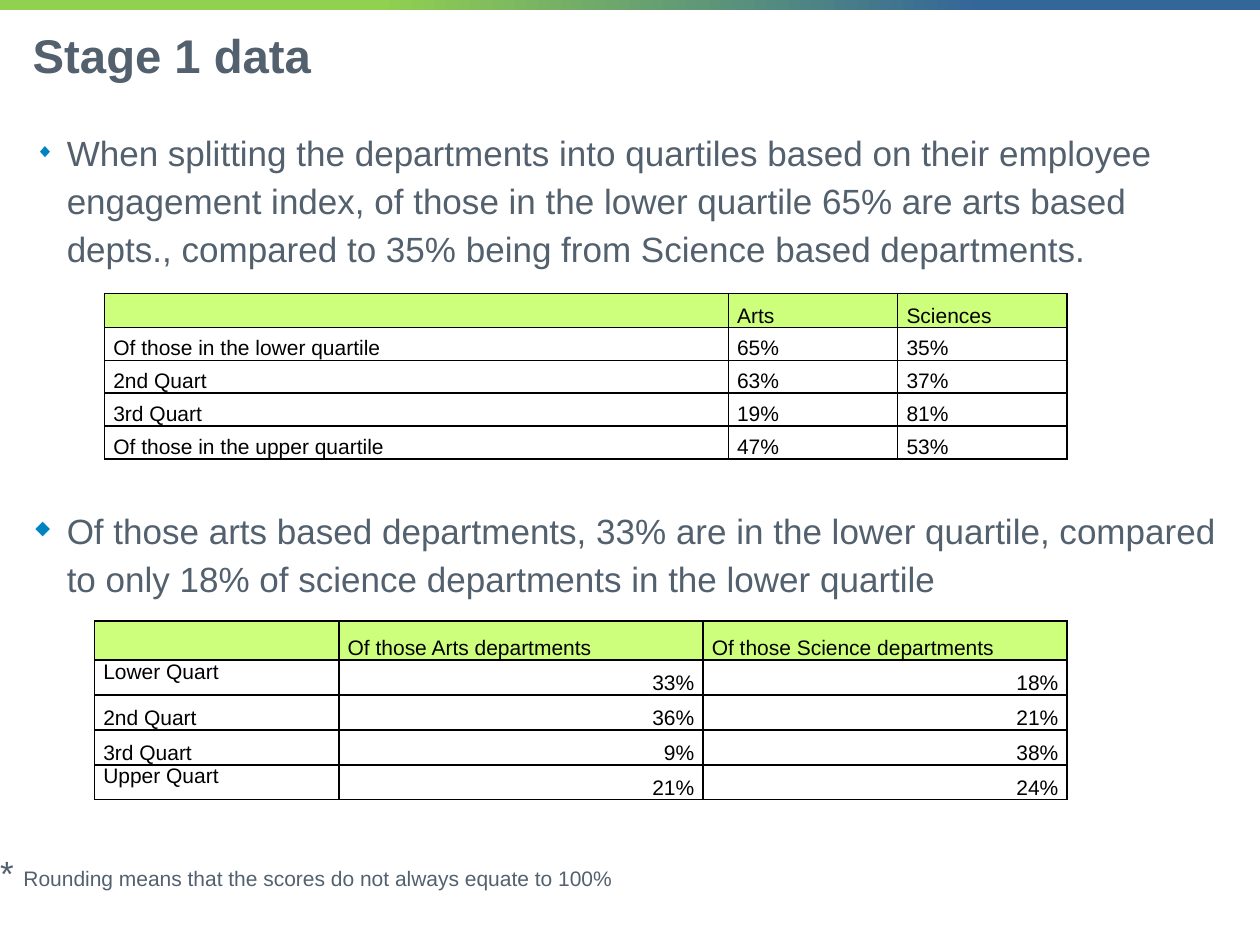
from dataclasses import dataclass

from lxml import etree
from pptx import Presentation
from pptx import util as u
from pptx.dml.color import RGBColor
from pptx.enum import shapes, text
from pptx.oxml.ns import qn

SLATE = RGBColor(0x53, 0x60, 0x6E)
BULLET_BLUE = RGBColor(0x00, 0x83, 0xC1)
LIME = RGBColor(0xCD, 0xFF, 0x7D)
BLACK = RGBColor(0, 0, 0)
BAR_GREEN = RGBColor(0x92, 0xD0, 0x50)
BAR_BLUE = RGBColor(0x33, 0x66, 0x99)
FONT = "Arial"
GRID = u.Inches(0.1)  # the slide is 100 columns by 75 rows


@dataclass(frozen=True)
class Area:
    """A place on the slide, in grid columns and rows."""
    left: float
    top: float
    width: float
    height: float

    def emu(self) -> list[int]:
        return [grid(n) for n in (self.left, self.top, self.width, self.height)]


@dataclass(frozen=True)
class QuartileTable:
    area: Area
    columns: tuple[float, ...]
    header_height: float
    row_height: float
    rows: tuple[tuple[str, ...], ...]
    top_margin: float = 0
    value_align: text.PP_ALIGN = text.PP_ALIGN.LEFT
    top_labels: tuple[str, ...] = ()


def grid(units: float) -> int:
    return round(units * GRID)


def set_font(font, size: float, color: RGBColor, bold: bool = False) -> None:
    font.name, font.size, font.bold = FONT, u.Pt(size), bold
    font.color.rgb = color


def place(shape, area: Area) -> None:
    shape.left, shape.top, shape.width, shape.height = area.emu()


def prepare_frame(shape):
    """Make a wrapping, top-anchored frame without margins; return its paragraph."""
    frame = shape.text_frame
    frame.word_wrap = True
    frame.auto_size = text.MSO_AUTO_SIZE.NONE
    frame.vertical_anchor = text.MSO_ANCHOR.TOP
    frame.margin_left = frame.margin_right = frame.margin_top = frame.margin_bottom = 0
    paragraph = frame.paragraphs[0]
    paragraph.line_spacing = 1.15
    paragraph.space_before = u.Pt(0)
    properties = paragraph._p.get_or_add_pPr()
    properties.set("marL", str(grid(2.5)))
    properties.set("indent", str(-grid(2.5)))
    return paragraph


def write_finding(shape, wording: str) -> None:
    paragraph = prepare_frame(shape)
    properties = paragraph._p.get_or_add_pPr()
    color = etree.SubElement(properties, qn("a:buClr"))
    etree.SubElement(color, qn("a:srgbClr"), val=str(BULLET_BLUE))
    etree.SubElement(properties, qn("a:buSzPct"), val="55000")
    etree.SubElement(properties, qn("a:buChar"), char="◆")
    set_font(paragraph.font, 20, SLATE)
    paragraph.add_run().text = wording


def write_footnote(shape, wording: str) -> None:
    paragraph = prepare_frame(shape)
    for part, size in (("* ", 20), (wording, 12)):
        run = paragraph.add_run()
        run.text = part
        set_font(run.font, size, SLATE)


def add_borders(cell) -> None:
    properties = cell._tc.get_or_add_tcPr()
    for side in ("lnL", "lnR", "lnT", "lnB"):
        line = etree.SubElement(properties, qn(f"a:{side}"), w=str(u.Pt(1)))
        fill = etree.SubElement(line, qn("a:solidFill"))
        etree.SubElement(fill, qn("a:srgbClr"), val=str(BLACK))


def add_quartile_table(slide, spec_: QuartileTable) -> None:
    table = slide.shapes.add_table(
        len(spec_.rows), len(spec_.columns), *spec_.area.emu()).table
    for column, width in zip(table.columns, spec_.columns):
        column.width = grid(width)
    for r, wordings in enumerate(spec_.rows):
        table.rows[r].height = grid(spec_.row_height if r else spec_.header_height)
        for c, wording in enumerate(wordings):
            cell = table.cell(r, c)
            add_borders(cell)
            if r == 0:
                cell.fill.solid()
                cell.fill.fore_color.rgb = LIME
            else:
                cell.fill.background()
            cell.margin_left = cell.margin_right = grid(0.7)
            cell.margin_top, cell.margin_bottom = grid(spec_.top_margin), 0
            cell.vertical_anchor = (text.MSO_ANCHOR.TOP if wording in spec_.top_labels
                                    else text.MSO_ANCHOR.BOTTOM)
            paragraph = cell.text_frame.paragraphs[0]
            if r and c:
                paragraph.alignment = spec_.value_align
            set_font(paragraph.font, 12, BLACK)
            if wording:
                paragraph.add_run().text = wording
            else:  # keeps the empty cell from stretching its row
                etree.SubElement(paragraph._p, qn("a:endParaRPr"), sz="1200")


def add_top_bar(slide) -> None:
    bar = slide.shapes.add_shape(
        shapes.MSO_SHAPE.RECTANGLE, *Area(0, 0, 100, 0.8).emu())
    bar.shadow.inherit = False
    bar.line.fill.background()
    bar.fill.gradient()
    bar.fill.gradient_angle = 0
    stops = ((0.3, BAR_GREEN), (0.78, BAR_BLUE))
    for stop, (position, color) in zip(bar.fill.gradient_stops, stops):
        stop.position = position
        stop.color.rgb = color


BY_QUARTILE = QuartileTable(
    Area(8.3, 23.3, 76.4, 13.2), (49.5, 13.45, 13.45), 2.7, 2.61,
    (("", "Arts", "Sciences"),
     ("Of those in the lower quartile", "65%", "35%"),
     ("2nd Quart", "63%", "37%"),
     ("3rd Quart", "19%", "81%"),
     ("Of those in the upper quartile", "47%", "53%")),
    top_margin=0.1)

BY_DEPARTMENT = QuartileTable(
    Area(7.5, 49.3, 77.2, 14.2), (19.4, 28.9, 28.9), 3.1, 2.77,
    (("", "Of those Arts departments", "Of those Science departments"),
     ("Lower Quart", "33%", "18%"),
     ("2nd Quart", "36%", "21%"),
     ("3rd Quart", "9%", "38%"),
     ("Upper Quart", "21%", "24%")),
    value_align=text.PP_ALIGN.RIGHT, top_labels=("Lower Quart", "Upper Quart"))


def main() -> None:
    deck = Presentation()
    deck.slide_width, deck.slide_height = grid(100), grid(75)
    slide = deck.slides.add_slide(deck.slide_layouts[1])
    add_top_bar(slide)

    title, first_finding = slide.placeholders
    place(title, Area(1.6, 1.6, 94.9, 9.2))
    title.text_frame.text = "Stage 1 data"
    title.text_frame.vertical_anchor = text.MSO_ANCHOR.TOP
    title.text_frame.auto_size = text.MSO_AUTO_SIZE.NONE
    heading = title.text_frame.paragraphs[0]
    heading.alignment = text.PP_ALIGN.LEFT
    set_font(heading.font, 27, SLATE, bold=True)

    place(first_finding, Area(2.8, 9.9, 94.1, 15.7))
    write_finding(first_finding, (
        "When splitting the departments into quartiles based on their employee "
        "engagement index, of those in the lower quartile 65% are arts based depts., "
        "compared to 35% being from Science based departments."))
    second_finding = slide.shapes.add_textbox(*Area(2.8, 39.9, 94.1, 7.9).emu())
    write_finding(second_finding, (
        "Of those arts based departments, 33% are in the lower quartile, compared "
        "to only 18% of science departments in the lower quartile"))

    for quartile_table in (BY_DEPARTMENT, BY_QUARTILE):
        add_quartile_table(slide, quartile_table)

    footnote = slide.shapes.add_textbox(*Area(0, 67.1, 94.1, 7.9).emu())
    write_footnote(footnote, "Rounding means that the scores do not always equate to 100%")
    deck.save("out.pptx")


if __name__ == "__main__":
    main()
